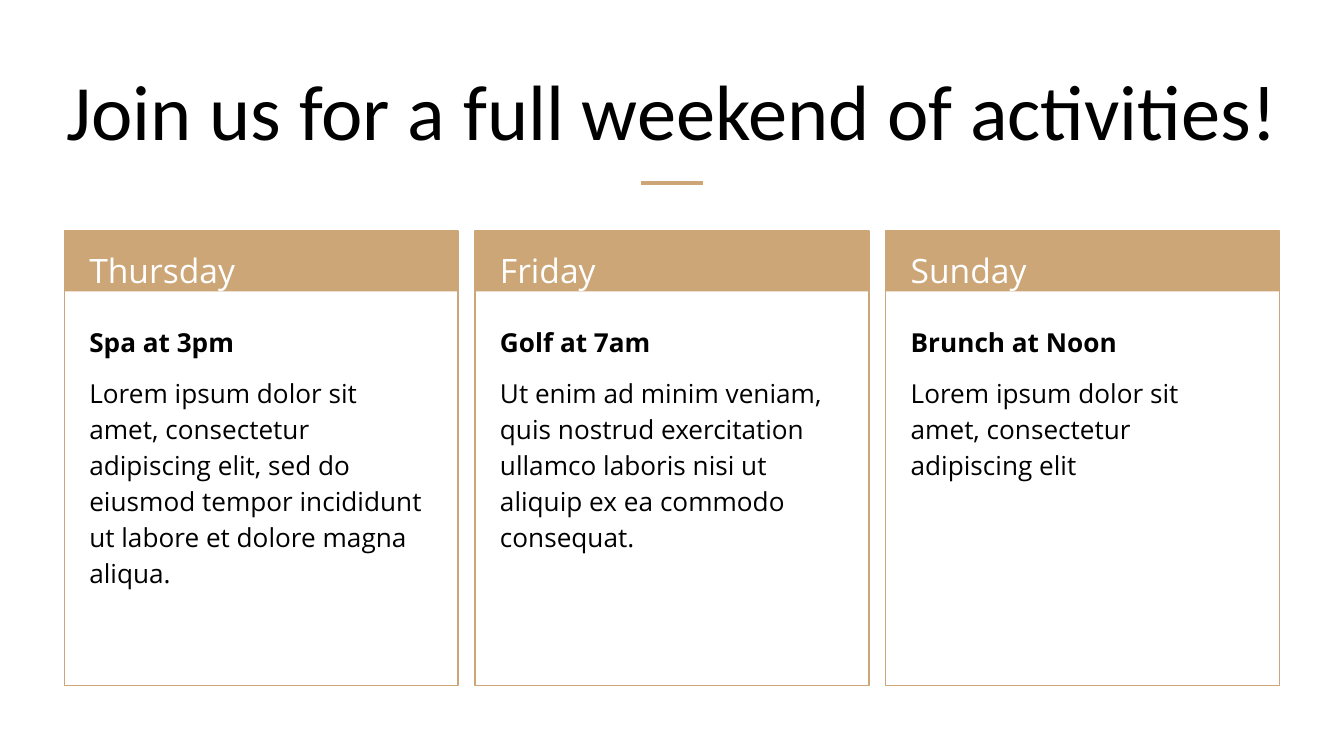
from lxml import etree
from pptx import Presentation
from pptx import util as u
from pptx.dml.color import RGBColor
from pptx.enum import shapes, text
from pptx.oxml.ns import qn

TAN, BLACK, WHITE = "CCA677", "000000", "FFFFFF"
CARD_LEFT, CARD_TOP, CARD_WIDTH, CARD_HEIGHT = 34.5, 123.8, 211, 243.4
CARD_PITCH, HEADER_HEIGHT, TEXT_INDENT, TEXT_WIDTH = 220, 32.4, 6.3, 196

TITLE = {"size": u.Pt(42), "name": "Calibri"}
DAY = {"size": u.Pt(18), "name": "Open Sans"}
EVENT = {"size": u.Pt(14), "name": "Open Sans", "bold": True}
DETAIL = {"size": u.Pt(14), "name": "Open Sans", "bold": False}
LINES = {"line_spacing": 1.15}
SPACED = {"line_spacing": 1.15, "space_before": u.Pt(8), "space_after": u.Pt(8)}
CENTERED = {"alignment": text.PP_ALIGN.CENTER}

CARDS = [
    ("Thursday", "Spa at 3pm",
     "Lorem ipsum dolor sit amet, consectetur adipiscing elit, sed do "
     "eiusmod tempor incididunt ut labore et dolore magna aliqua."),
    ("Friday", "Golf at 7am",
     "Ut enim ad minim veniam, quis nostrud exercitation ullamco laboris "
     "nisi ut aliquip ex ea commodo consequat."),
    ("Sunday", "Brunch at Noon",
     "Lorem ipsum dolor sit amet, consectetur adipiscing elit"),
]


def color(value):
    return RGBColor.from_string(value)


def set_values(target, values):
    for name, value in values.items():
        setattr(target, name, value)


def points(*lengths):
    return [u.Pt(length) for length in lengths]


def add_text(slide, box, paragraphs, ink, anchor=text.MSO_ANCHOR.TOP):
    frame = slide.shapes.add_textbox(*points(*box)).text_frame
    margins = dict.fromkeys(
        ("margin_left", "margin_top", "margin_right", "margin_bottom"), u.Pt(7.2))
    set_values(frame, {"word_wrap": True, "vertical_anchor": anchor, **margins})
    for index, (content, font, layout) in enumerate(paragraphs):
        paragraph = frame.add_paragraph() if index else frame.paragraphs[0]
        set_values(paragraph, layout)
        run = paragraph.add_run()
        run.text = content
        set_values(run.font, font)
        run.font.color.rgb = color(ink)


def add_rectangle(group, box, fill=None, line=None):
    shape = group.shapes.add_shape(shapes.MSO_SHAPE.RECTANGLE, *points(*box))
    shape.shadow.inherit = False
    if fill:
        shape.fill.solid()
        shape.fill.fore_color.rgb = color(fill)
    else:
        shape.fill.background()
    if line:
        shape.line.color.rgb = color(line)
        shape.line.width = u.Pt(0.75)
    else:
        shape.line.fill.background()


def add_divider(slide, left, right, y):
    connector = slide.shapes.add_connector(
        shapes.MSO_CONNECTOR.STRAIGHT, *points(left, y, right, y))
    connector.line.color.rgb = color(TAN)
    connector.line.width = u.Pt(2.25)
    etree.SubElement(connector._element.spPr, qn("a:effectLst"))


def add_card(slide, left, day, event, detail):
    group = slide.shapes.add_group_shape()
    add_rectangle(group, (left, CARD_TOP, CARD_WIDTH, CARD_HEIGHT), line=TAN)
    add_rectangle(group, (left, CARD_TOP, CARD_WIDTH, HEADER_HEIGHT), fill=TAN)
    text_left = left + TEXT_INDENT
    add_text(slide, (text_left, 123.2, TEXT_WIDTH, HEADER_HEIGHT),
             [(day, DAY, LINES)], WHITE)
    add_text(slide, (text_left, 165, TEXT_WIDTH, 201.6),
             [(event, EVENT, LINES), (detail, DETAIL, SPACED)], BLACK)


def main():
    presentation = Presentation()
    set_values(presentation, {"slide_width": u.Pt(720), "slide_height": u.Pt(405)})
    slide = presentation.slides.add_slide(presentation.slide_layouts[6])
    add_text(slide, (24.5, 25.2, 671, 65.5),
             [("Join us for a full weekend of activities!", TITLE, CENTERED)],
             BLACK, text.MSO_ANCHOR.BOTTOM)
    add_divider(slide, 343.5, 376.5, 98)
    for index, card in enumerate(CARDS):
        add_card(slide, CARD_LEFT + index * CARD_PITCH, *card)
    presentation.save("out.pptx")


if __name__ == "__main__":
    main()
